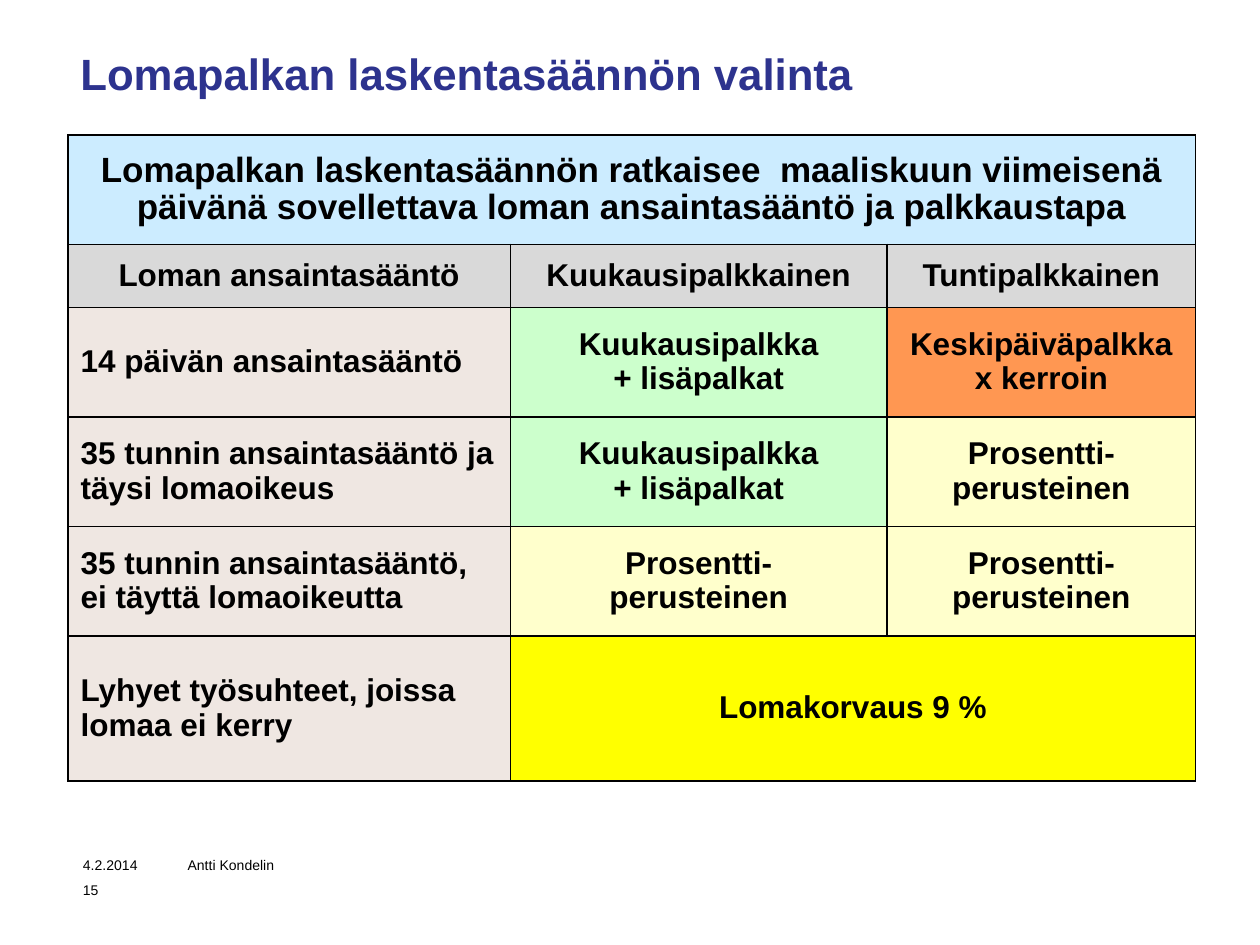
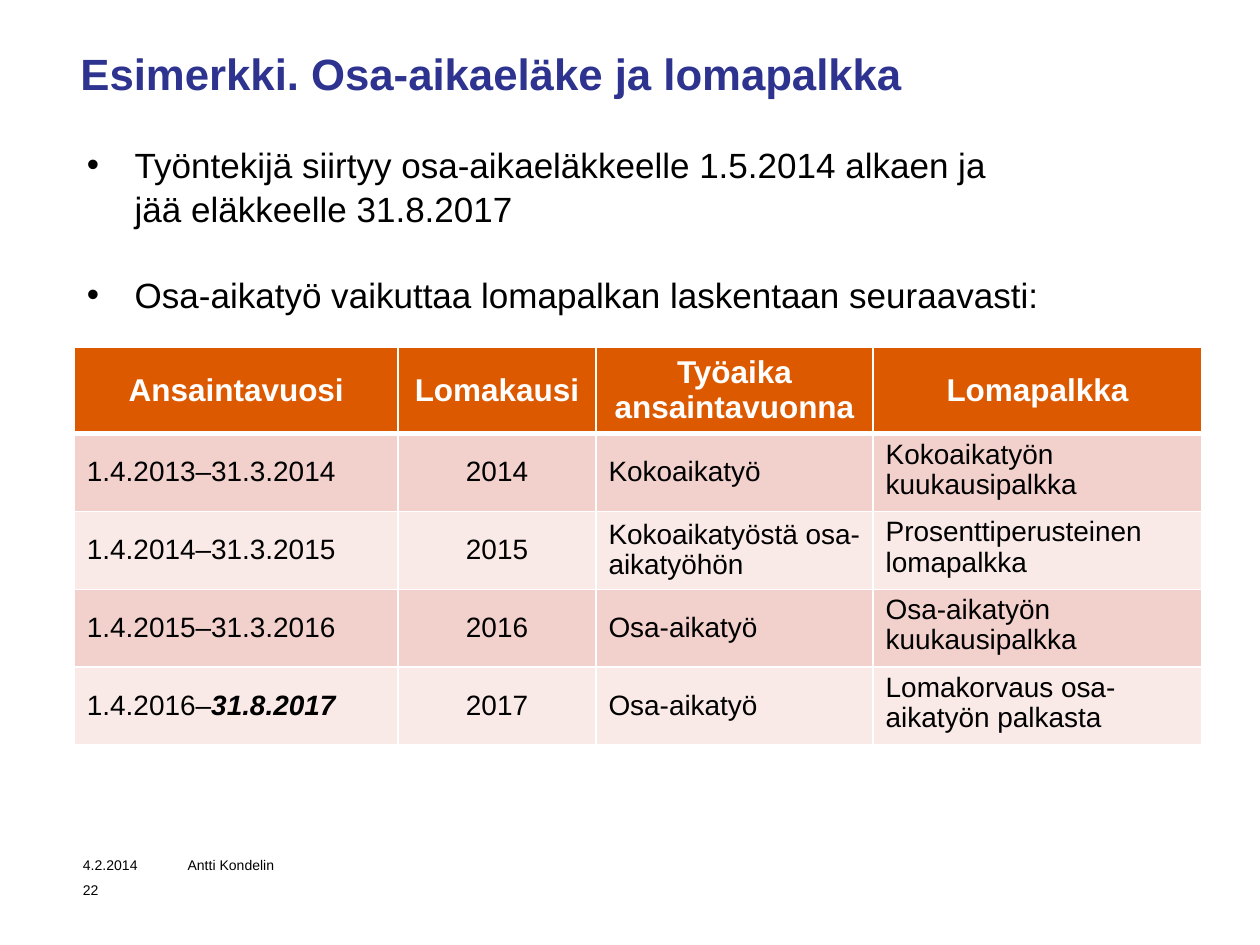
from dataclasses import dataclass

import lxml.etree
import pptx
import pptx.dml.color
import pptx.enum.text
import pptx.oxml.ns
import pptx.util

Inches = pptx.util.Inches
Pt = pptx.util.Pt
Align = pptx.enum.text.PP_ALIGN
Anchor = pptx.enum.text.MSO_ANCHOR
qn = pptx.oxml.ns.qn


# Theme: colours, font and type sizes
@dataclass(frozen=True)
class Theme:
    font: str = "Arial"
    black: str = "000000"
    white: str = "FFFFFF"
    navy: str = "2D338E"
    sky: str = "CCECFF"
    grey: str = "D9D9D9"
    sand: str = "EFE7E2"
    green: str = "CCFFCC"
    orange: str = "FF9752"
    cream: str = "FFFFCC"
    yellow: str = "FFFF00"
    rust: str = "DD5900"
    rose: str = "F2D1CC"
    blush: str = "F9EAE7"
    title: float = 25
    lead: float = 20
    head: float = 18
    body: float = 16
    foot: float = 8
    tight: float = 0.97
    loose: float = 1.05


THEME = Theme()


@dataclass(frozen=True)
class Style:
    size: float
    color: str = THEME.black
    bold: bool = False
    italic: bool = False


@dataclass(frozen=True)
class Box:
    left: float
    top: float
    width: float
    height: float


@dataclass(frozen=True)
class Cell:
    text: str
    fill: str
    style: Style
    align: Align = Align.CENTER
    anchor: Anchor = Anchor.MIDDLE
    span: int = 1
    tail: str = ""  # closing words in bold italics


@dataclass(frozen=True)
class Grid:
    left: float
    top: float
    cols: list[float]
    rows: list[float]
    line: str
    rule: float  # width of the line below the first row
    cells: list[list[Cell]]


def paint(run, style: Style) -> None:
    font = run.font
    font.name = THEME.font
    font.size = Pt(style.size)
    font.bold = style.bold
    font.italic = style.italic
    font.color.rgb = pptx.dml.color.RGBColor.from_string(style.color)


def add_text(slide, box: Box, text: str, style: Style):
    shape = slide.shapes.add_textbox(
        Inches(box.left), Inches(box.top), Inches(box.width), Inches(box.height))
    frame = shape.text_frame
    frame.word_wrap = True
    frame.text = text
    for par in frame.paragraphs:
        for run in par.runs:
            paint(run, style)
    return frame


def add_list(slide, box: Box, items: list[str]) -> None:
    frame = add_text(slide, box, "\n".join(items), Style(THEME.lead))
    for i, par in enumerate(frame.paragraphs):
        props = par._p.get_or_add_pPr()
        props.set("marL", str(Inches(0.38)))
        props.set("indent", str(-Inches(0.38)))
        lxml.etree.SubElement(props, qn("a:buFont"), typeface=THEME.font)
        lxml.etree.SubElement(props, qn("a:buChar"), char="•")
        par.line_spacing = THEME.loose
        if i:
            par.space_before = Pt(24)


# Tables
def add_edge(cell, side: str, color: str, width: float) -> None:
    props = cell._tc.get_or_add_tcPr()
    line = lxml.etree.SubElement(props, qn("a:ln" + side), w=str(Pt(width)))
    fill = lxml.etree.SubElement(line, qn("a:solidFill"))
    lxml.etree.SubElement(fill, qn("a:srgbClr"), val=color)


def fill_cell(cell, data: Cell) -> None:
    cell.fill.solid()
    cell.fill.fore_color.rgb = pptx.dml.color.RGBColor.from_string(data.fill)
    cell.vertical_anchor = data.anchor
    cell.text_frame.text = data.text
    for par in cell.text_frame.paragraphs:
        par.alignment = data.align
        par.line_spacing = THEME.tight
        for run in par.runs:
            paint(run, data.style)
    if data.tail:
        run = cell.text_frame.paragraphs[-1].add_run()
        run.text = data.tail
        paint(run, Style(data.style.size, bold=True, italic=True))


def add_grid(slide, grid: Grid) -> None:
    table = slide.shapes.add_table(
        len(grid.rows), len(grid.cols), Inches(grid.left), Inches(grid.top),
        Inches(sum(grid.cols)), Inches(sum(grid.rows))).table
    table.first_row = table.horz_banding = False
    for col, width in zip(table.columns, grid.cols):
        col.width = Inches(width)
    for r, (row, height) in enumerate(zip(table.rows, grid.rows)):
        row.height = Inches(height)
        for cell in row.cells:
            for side in "LRTB":
                ruled = (r, side) in ((0, "B"), (1, "T"))
                add_edge(cell, side, grid.line, grid.rule if ruled else 1)
        c = 0
        for data in grid.cells[r]:
            cell = table.cell(r, c)
            if data.span > 1:
                cell.merge(table.cell(r, c + data.span - 1))
            fill_cell(cell, data)
            c += data.span


# Parts shared by both slides
def add_page(deck, title: str, number: int):
    slide = deck.slides.add_slide(deck.slide_layouts[6])
    add_text(slide, Box(0.54, 0.32, 8.96, 0.85), title,
             Style(THEME.title, THEME.navy, bold=True))
    for box, text in (
        (Box(0.56, 6.75, 1.02, 0.24), "4.2.2014"),
        (Box(1.39, 6.75, 1.78, 0.24), "Antti Kondelin"),
        (Box(0.56, 6.95, 0.8, 0.24), str(number)),
    ):
        add_text(slide, box, text, Style(THEME.foot))
    return slide


# Slide 1: choice of the holiday pay rule
def add_rules(deck) -> None:
    slide = add_page(deck, "Lomapalkan laskentasäännön valinta", 15)
    bold = Style(THEME.head, bold=True)

    def side(text: str) -> Cell:
        return Cell(text, THEME.sand, bold, Align.LEFT)

    month = Cell("Kuukausipalkka\n+ lisäpalkat", THEME.green, bold)
    share = Cell("Prosentti-\nperusteinen", THEME.cream, bold)
    heads = ["Loman ansaintasääntö", "Kuukausipalkkainen", "Tuntipalkkainen"]
    cells = [
        [Cell("Lomapalkan laskentasäännön ratkaisee  maaliskuun viimeisenä "
              "päivänä sovellettava loman ansaintasääntö ja palkkaustapa",
              THEME.sky, Style(THEME.lead, bold=True), span=3)],
        [Cell(text, THEME.grey, bold) for text in heads],
        [side("14 päivän ansaintasääntö"), month,
         Cell("Keskipäiväpalkka\nx kerroin", THEME.orange, bold)],
        [side("35 tunnin ansaintasääntö ja täysi lomaoikeus"), month, share],
        [side("35 tunnin ansaintasääntö, ei täyttä lomaoikeutta"), share, share],
        [side("Lyhyet työsuhteet, joissa lomaa ei kerry"),
         Cell("Lomakorvaus 9 %", THEME.yellow, bold, span=2)],
    ]
    add_grid(slide, Grid(0.54, 1.07, [3.51, 2.99, 2.45],
                         [0.87, 0.5, 0.87, 0.87, 0.87, 1.15],
                         THEME.black, 1, cells))


# Slide 2: part-time pension example
def add_case(deck) -> None:
    slide = add_page(deck, "Esimerkki. Osa-aikaeläke ja lomapalkka", 22)
    add_list(slide, Box(0.59, 1.07, 7.81, 1.45), [
        "Työntekijä siirtyy osa-aikaeläkkeelle 1.5.2014 alkaen ja "
        "\vjää eläkkeelle 31.8.2017",
        "Osa-aikatyö vaikuttaa lomapalkan laskentaan seuraavasti:",
    ])
    heads = ["Ansaintavuosi", "Lomakausi", "Työaika ansaintavuonna", "Lomapalkka"]
    years = [
        ("1.4.2013–31.3.2014", "", "2014", "Kokoaikatyö",
         "Kokoaikatyön kuukausipalkka"),
        ("1.4.2014–31.3.2015", "", "2015", "Kokoaikatyöstä osa-aikatyöhön",
         "Prosenttiperusteinen lomapalkka"),
        ("1.4.2015–31.3.2016", "", "2016", "Osa-aikatyö",
         "Osa-aikatyön kuukausipalkka"),
        ("1.4.2016–", "31.8.2017", "2017", "Osa-aikatyö",
         "Lomakorvaus osa-aikatyön palkasta"),
    ]
    white = Style(THEME.head, THEME.white, bold=True)
    plain = Style(THEME.body)
    cells = [[Cell(text, THEME.rust, white) for text in heads]]
    for i, (span, tail, year, hours, pay) in enumerate(years):
        fill = THEME.blush if i % 2 else THEME.rose
        cells.append([
            Cell(span, fill, plain, Align.LEFT, tail=tail),
            Cell(year, fill, plain),
            Cell(hours, fill, plain, Align.LEFT),
            Cell(pay, fill, plain, Align.LEFT, Anchor.TOP),
        ])
    add_grid(slide, Grid(0.59, 2.76, [2.57, 1.57, 2.2, 2.61],
                         [0.66] + [0.59] * len(years), THEME.white, 3, cells))


def main() -> None:
    deck = pptx.Presentation()
    deck.slide_width = Inches(10)
    deck.slide_height = Inches(7.5)
    add_rules(deck)
    add_case(deck)
    deck.save("out.pptx")


if __name__ == "__main__":
    main()
